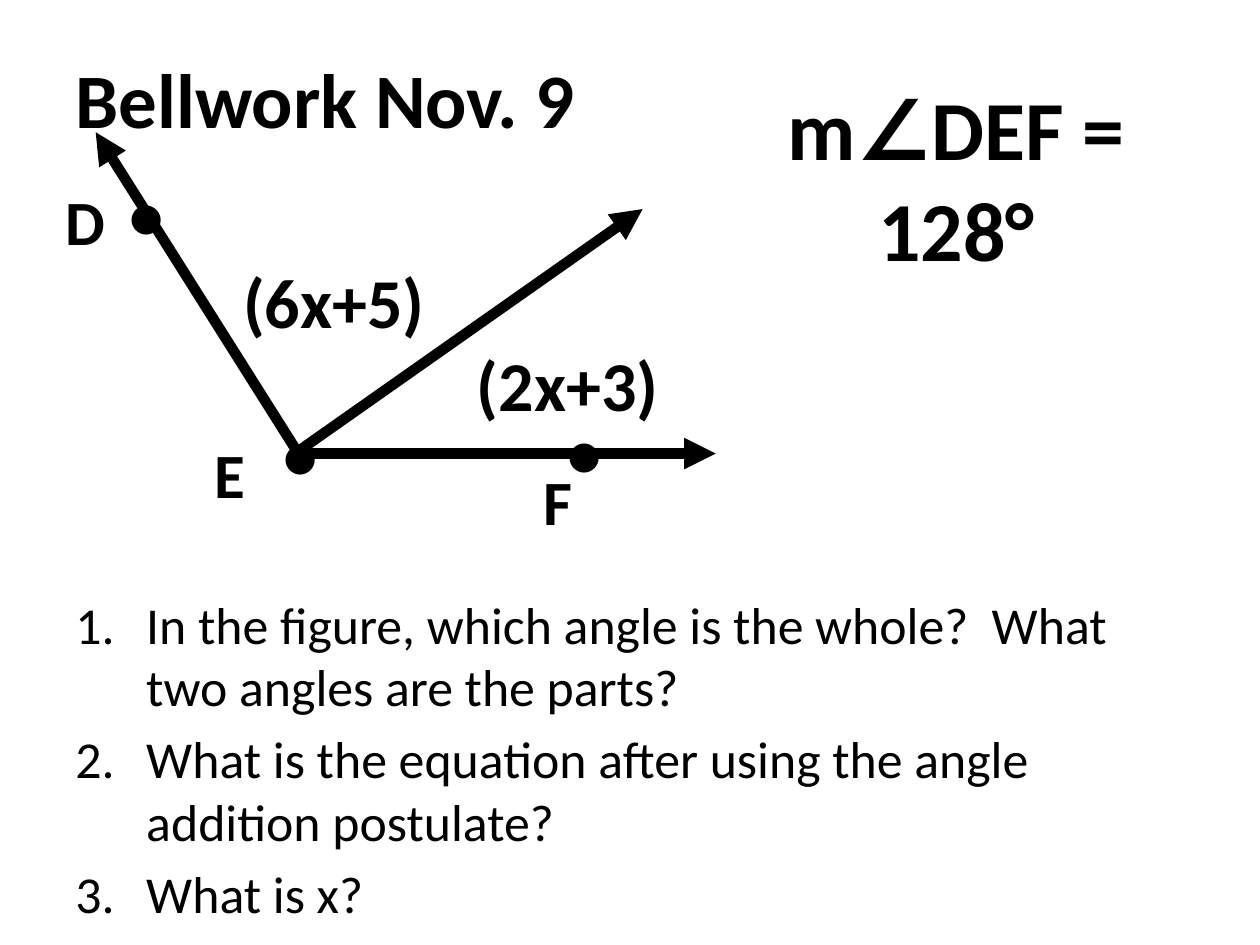
import dataclasses

import lxml.etree
import pptx
import pptx.dml.color
import pptx.enum.shapes
import pptx.enum.text
import pptx.oxml.ns
import pptx.util

Pt = pptx.util.Pt
Align = pptx.enum.text.PP_ALIGN


@dataclasses.dataclass(frozen=True)
class Theme:
    font: str = "Calibri"
    ink: str = "000000"
    title_size: float = 44
    answer_size: float = 48
    expression_size: float = 40
    point_size: float = 36
    question_size: float = 29.6
    ray_width: float = 6


class SlideBuilder:
    def __init__(self, slide, theme):
        self.slide = slide
        self.theme = theme
        self.ink = pptx.dml.color.RGBColor.from_string(theme.ink)

    def format_paragraph(self, paragraph, size, bold, alignment):
        paragraph.alignment = alignment
        for run in paragraph.runs:
            run.font.name = self.theme.font
            run.font.size = Pt(size)
            run.font.bold = bold
            run.font.color.rgb = self.ink

    def title(self, text, left, top, width, height):
        shape = self.slide.shapes.title
        shape.left, shape.top = Pt(left), Pt(top)
        shape.width, shape.height = Pt(width), Pt(height)
        frame = shape.text_frame
        frame.text = text
        frame.vertical_anchor = pptx.enum.text.MSO_ANCHOR.MIDDLE
        self.format_paragraph(frame.paragraphs[0], self.theme.title_size, True, Align.LEFT)

    def label(self, text, left, top, width, height, size, bold=True, wrap=False, inset=7.2):
        shape = self.slide.shapes.add_textbox(Pt(left), Pt(top), Pt(width), Pt(height))
        frame = shape.text_frame
        frame.word_wrap = wrap
        frame.margin_left = frame.margin_right = Pt(inset)
        frame.text = text
        self.format_paragraph(frame.paragraphs[0], size, bold, Align.CENTER)

    def ray(self, start, end):
        connector = self.slide.shapes.add_connector(
            pptx.enum.shapes.MSO_CONNECTOR.STRAIGHT, *map(Pt, start + end))
        connector.line.color.rgb = self.ink
        connector.line.width = Pt(self.theme.ray_width)
        qualified = pptx.oxml.ns.qn
        line = connector.line._get_or_add_ln()
        lxml.etree.SubElement(line, qualified("a:tailEnd"), type="triangle")
        lxml.etree.SubElement(connector._element.spPr, qualified("a:effectLst"))

    def numbered_list(self, items, left, top, width, height, indent):
        shape = self.slide.shapes.add_textbox(Pt(left), Pt(top), Pt(width), Pt(height))
        frame = shape.text_frame
        frame.word_wrap = True
        frame.text = "\n".join(items)
        size = self.theme.question_size
        for index, paragraph in enumerate(frame.paragraphs):
            self.format_paragraph(paragraph, size, False, Align.LEFT)
            paragraph.space_before = Pt(0.2 * size if index else 0)
            properties = paragraph._p.get_or_add_pPr()
            properties.set("marL", str(Pt(indent)))
            properties.set("indent", str(-Pt(indent)))
            lxml.etree.SubElement(
                properties, pptx.oxml.ns.qn("a:buAutoNum"), type="arabicPeriod")


def main():
    presentation = pptx.Presentation()
    presentation.slide_width, presentation.slide_height = Pt(720), Pt(540)
    slide = presentation.slides.add_slide(presentation.slide_layouts[5])
    theme = Theme()
    builder = SlideBuilder(slide, theme)

    builder.title("Bellwork Nov. 9", 36, 21.6, 648, 68.4)
    builder.numbered_list(
        ["In the figure, which angle is the whole?  What two angles are the parts?",
         "What is the equation after using the angle addition postulate?",
         "What is x?"],
        36, 335, 648, 195, indent=40.5)

    vertex = (168.5, 259.2)
    builder.ray(vertex, (409, 259.2))
    builder.ray((171.4, 260.6), (54.7, 75.6))
    builder.ray(vertex, (367.2, 119.5))

    for name, left, top, width in (
            ("D", 30.2, 100.8, 37.4), ("E", 115.2, 245.5, 32.4), ("F", 303.1, 260.6, 31)):
        builder.label(name, left, top, width, 51, theme.point_size)
    for left, top in ((65.5, 96.5), (153.4, 234), (315.4, 232.6)):
        builder.label("●", left, top, 36.7, 51, theme.point_size, bold=False)

    builder.label("(6x+5)", 131, 144, 119.5, 55.4, theme.expression_size)
    builder.label("(2x+3)", 252, 191.5, 144.7, 55.4, theme.expression_size, wrap=True)
    builder.label("m∠DEF = 128°", 393.1, 40.3, 306.7, 65.5, theme.answer_size,
                  wrap=True, inset=28)

    presentation.save("out.pptx")


if __name__ == "__main__":
    main()
